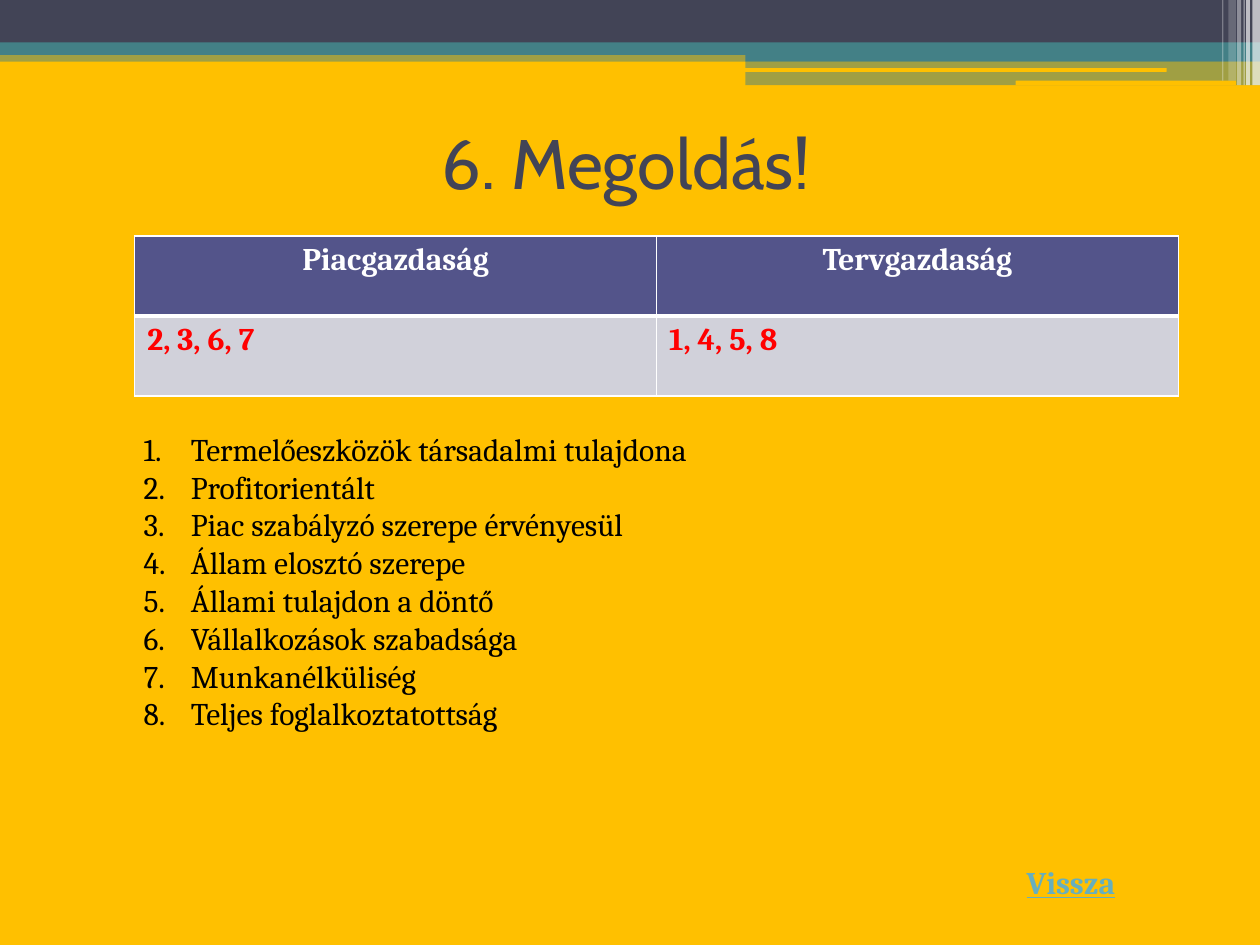
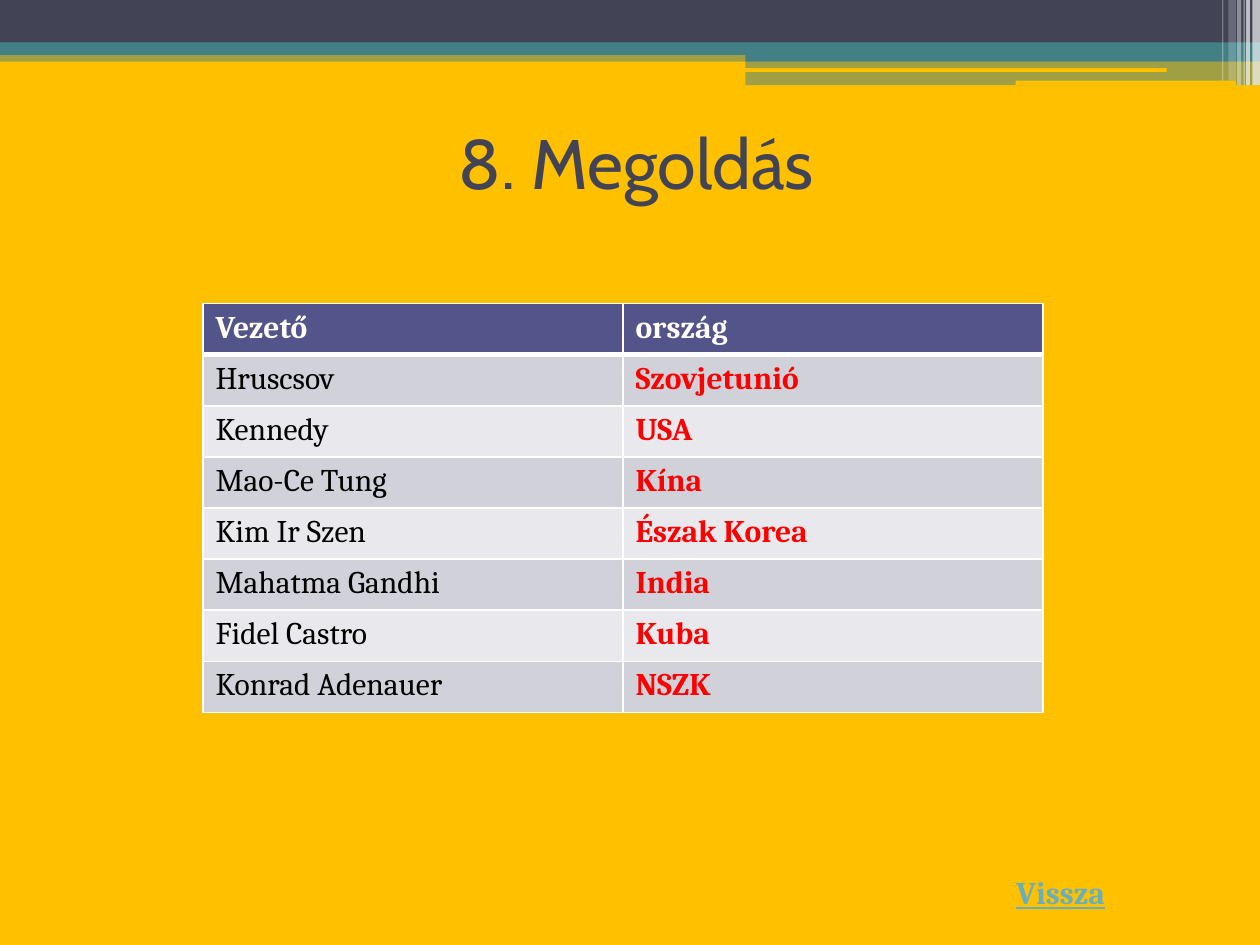
import dataclasses

import lxml.etree
import pptx
import pptx.dml.color
import pptx.enum.shapes
import pptx.enum.text
import pptx.oxml.ns
import pptx.util

Pt = pptx.util.Pt
qn = pptx.oxml.ns.qn
RECT = pptx.enum.shapes.MSO_SHAPE.RECTANGLE
ROUND = pptx.enum.shapes.MSO_SHAPE.ROUNDED_RECTANGLE
CENTER = pptx.enum.text.PP_ALIGN.CENTER
LEFT = pptx.enum.text.PP_ALIGN.LEFT


@dataclasses.dataclass(frozen=True)
class Theme:
    gold: str = "FFC000"
    slate: str = "424456"
    teal: str = "438086"
    white: str = "FFFFFF"
    black: str = "000000"
    answer: str = "FF0000"
    link: str = "67AFBD"
    header: str = "53548A"
    rows: tuple = ("D1D1DA", "E9E9ED")
    title_font: str = "Cabin"
    body_font: str = "Cambria"
    title_size: int = 40
    body_size: int = 18


T = Theme()
TITLE = {"name": T.title_font, "size": Pt(T.title_size), "color": T.slate}
BODY = {"name": T.body_font, "size": Pt(T.body_size), "color": T.black}
HEADER = {**BODY, "color": T.white, "bold": True}
ANSWER = {**BODY, "color": T.answer, "bold": True}
LINK = {**BODY, "color": T.link, "bold": True, "underline": True}

# Top bands: left, top, width, height, shape, colour, opacity in percent
BANDS = [
    (0, 28.8, 720, 6.5, RECT, T.teal, 50),
    (0, 0, 720, 24.5, RECT, T.slate, 100),
    (0, 24.2, 720, 7.2, RECT, T.teal, 100),
    (426, 28.1, 294, 7.2, RECT, T.teal, 100),
    (426, 35.3, 294, 13.4, RECT, T.teal, 50),
    (425.5, 38.9, 241.2, 2.2, ROUND, T.gold, 100),
    (580.3, 46.1, 126, 2.6, ROUND, T.gold, 100),
]
# Stripes in the right corner: left, width, height, opacity in percent
STRIPES = [
    (715.7, 4.3, 48.7, 65), (712.1, 2.2, 48.7, 65), (710.6, 0.7, 48.7, 60),
    (707, 2.2, 48.7, 40), (702, 4.3, 46.1, 20), (698.4, 0.7, 46.1, 30),
]
BANDS += [(x, 0, w, h, RECT, T.white, a) for x, w, h, a in STRIPES]

FEATURES = [
    "Termelőeszközök társadalmi tulajdona", "Profitorientált",
    "Piac szabályzó szerepe érvényesül", "Állam elosztó szerepe",
    "Állami tulajdon a döntő", "Vállalkozások szabadsága",
    "Munkanélküliség", "Teljes foglalkoztatottság",
]
ECONOMIES = [("Piacgazdaság", "Tervgazdaság"), ("2, 3, 6, 7", "1, 4, 5, 8")]
LEADERS = [
    ("Vezető", "ország"), ("Hruscsov", "Szovjetunió"), ("Kennedy", "USA"),
    ("Mao-Ce Tung", "Kína"), ("Kim Ir Szen", "Észak Korea"),
    ("Mahatma Gandhi", "India"), ("Fidel Castro", "Kuba"),
    ("Konrad Adenauer", "NSZK"),
]


def rgb(color):
    return pptx.dml.color.RGBColor.from_string(color)


def paint(fill, color):
    fill.solid()
    fill.fore_color.rgb = rgb(color)


def add_run(p, text, fmt):
    r = p.add_run()
    r.text = text
    for name, value in fmt.items():
        if name == "color":
            r.font.color.rgb = rgb(value)
        else:
            setattr(r.font, name, value)
    return r


def place(sp, left, top, width, height):
    box = {"left": left, "top": top, "width": width, "height": height}
    for name, value in box.items():
        setattr(sp, name, Pt(value))


def line_xml(tag, width, color):
    """Solid line element for a cell border or a text outline."""
    ln = lxml.etree.Element(qn(tag), w=str(Pt(width)))
    fill = lxml.etree.SubElement(ln, qn("a:solidFill"))
    lxml.etree.SubElement(fill, qn("a:srgbClr"), val=color)
    return ln


def add_band(s, left, top, width, height, shape, color, opacity):
    sp = s.shapes.add_shape(shape, Pt(left), Pt(top), Pt(width), Pt(height))
    sp.shadow.inherit = False
    sp.line.fill.background()
    paint(sp.fill, color)
    if opacity < 100:
        clr = sp.fill._xPr.find(".//" + qn("a:srgbClr"))
        lxml.etree.SubElement(clr, qn("a:alpha"), val=str(opacity * 1000))


def add_slide(prs, layout, title, title_left):
    s = prs.slides.add_slide(prs.slide_layouts[layout])
    for band in BANDS:
        add_band(s, *band)
    sp = s.shapes.title
    place(sp, title_left, 50.4, 648, 84.2)
    tf = sp.text_frame
    tf.vertical_anchor = pptx.enum.text.MSO_ANCHOR.MIDDLE
    p = tf.paragraphs[0]
    p.alignment = CENTER
    add_run(p, title, TITLE)
    return s


def add_back_label(s, left, top):
    sp = s.shapes.add_textbox(Pt(left), Pt(top), Pt(74.2), Pt(28.8))
    tf = sp.text_frame
    tf.word_wrap = False
    tf.auto_size = pptx.enum.text.MSO_AUTO_SIZE.SHAPE_TO_FIT_TEXT
    r = add_run(tf.paragraphs[0], "Vissza", LINK)
    r.font._element.insert(0, line_xml("a:ln", 1.4, T.white))


def fill_numbered_list(sp, items):
    tf = sp.text_frame
    tf.auto_size = pptx.enum.text.MSO_AUTO_SIZE.NONE
    for i, item in enumerate(items):
        p = tf.add_paragraph() if i else tf.paragraphs[0]
        pPr = p._p.get_or_add_pPr()
        pPr.set("marL", str(Pt(27)))
        pPr.set("indent", str(Pt(-27)))
        lxml.etree.SubElement(pPr, qn("a:buFont"), typeface="+mj-lt")
        lxml.etree.SubElement(pPr, qn("a:buAutoNum"), type="arabicPeriod")
        p.space_before = Pt(0)
        add_run(p, item, BODY)


def format_cell(cell, row, text, fmt, align):
    paint(cell.fill, T.rows[(row - 1) % 2] if row else T.header)
    # The rule under the header row is heavier than the grid
    top, bottom = 3 if row == 1 else 1, 1 if row else 3
    widths = {"a:lnL": 1, "a:lnR": 1, "a:lnT": top, "a:lnB": bottom}
    tcPr = cell._tc.get_or_add_tcPr()
    for i, (tag, width) in enumerate(widths.items()):
        tcPr.insert(i, line_xml(tag, width, T.white))
    p = cell.text_frame.paragraphs[0]
    p.alignment = align
    add_run(p, text, fmt)


def add_answer_table(s, data, left, top, col_width, row_height,
                     column_formats, header_align):
    cols = len(data[0])
    frame = s.shapes.add_table(len(data), cols, Pt(left), Pt(top),
                               Pt(col_width * cols), Pt(row_height * len(data)))
    table = frame.table
    table.horz_banding = False
    for col in table.columns:
        col.width = Pt(col_width)
    for i, values in enumerate(data):
        table.rows[i].height = Pt(row_height)
        for j, text in enumerate(values):
            fmt = column_formats[j] if i else HEADER
            format_cell(table.cell(i, j), i, text, fmt,
                        LEFT if i else header_align)


def main():
    prs = pptx.Presentation()
    prs.slide_width, prs.slide_height = Pt(720), Pt(540)
    paint(prs.slide_master.background.fill, T.gold)

    # Market and planned economy
    s = add_slide(prs, 1, "6. Megoldás!", 33.8)
    add_back_label(s, 579.6, 489.6)
    add_answer_table(s, ECONOMIES, 77, 134.8, 298.2, 45.8,
                     (ANSWER, ANSWER), CENTER)
    body = s.placeholders[1]
    place(body, 74.9, 242, 504.7, 181.4)
    fill_numbered_list(body, FEATURES)

    # Leaders and their countries
    s = add_slide(prs, 5, "8. Megoldás", 39.6)
    add_back_label(s, 573.8, 495.4)
    add_answer_table(s, LEADERS, 116, 173.5, 240, 29.2,
                     (BODY, ANSWER), LEFT)

    prs.save("out.pptx")


if __name__ == "__main__":
    main()
